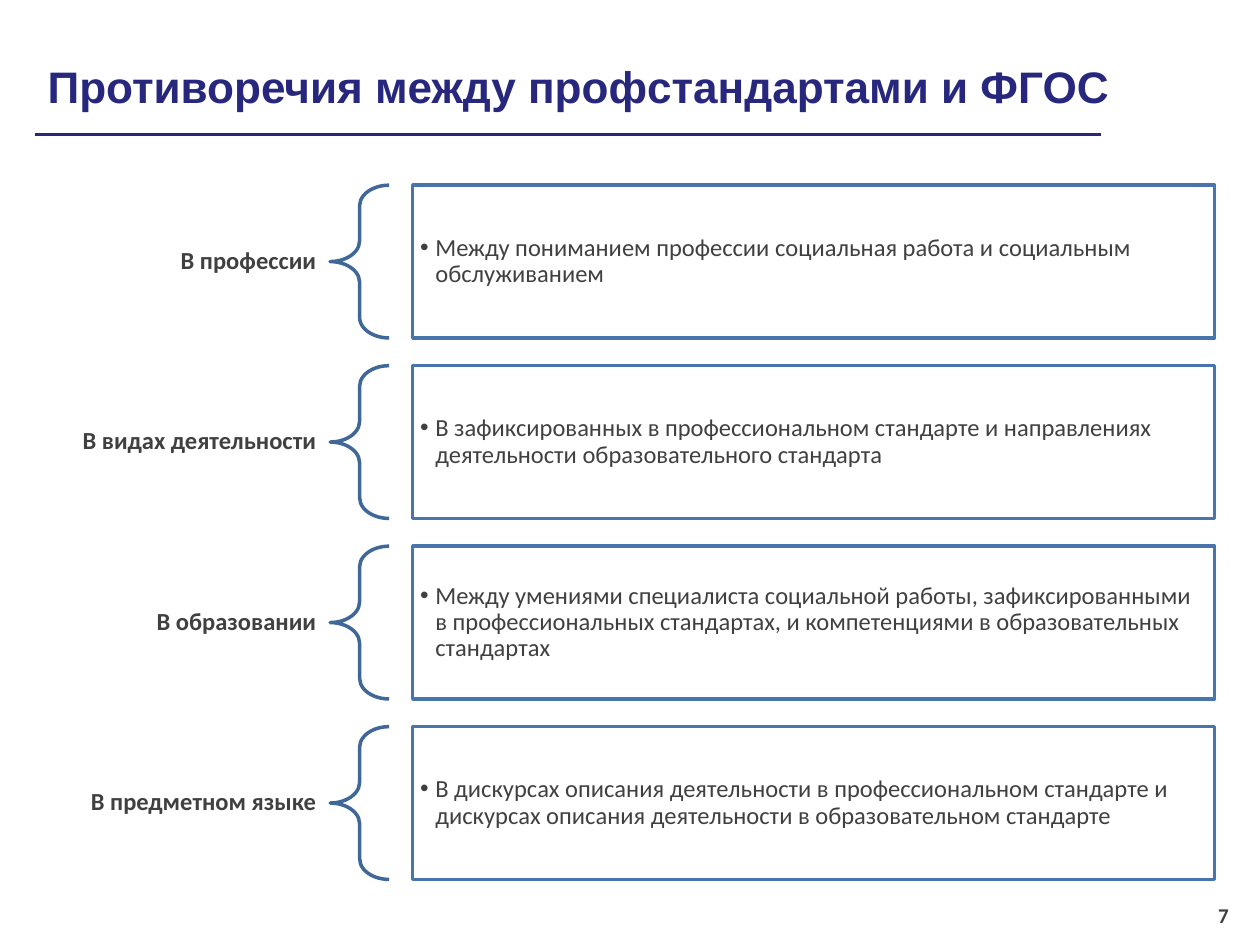
from lxml import etree
from pptx import Presentation
from pptx.dml.color import RGBColor
from pptx.enum import shapes, text
from pptx.oxml.ns import qn
from pptx.util import Inches, Pt

NAVY, GREY, WHITE = "27277E", "404040", "FFFFFF"
BRACE, FRAME = "3F6797", "4875AC"
ALIGN = text.PP_ALIGN

ROWS = [
    ("В профессии",
     "Между пониманием профессии социальная работа и социальным обслуживанием"),
    ("В видах деятельности",
     "В зафиксированных в профессиональном стандарте и направлениях "
     "деятельности образовательного стандарта"),
    ("В образовании",
     "Между умениями специалиста социальной работы, зафиксированными в "
     "профессиональных стандартах, и компетенциями в образовательных стандартах"),
    ("В предметном языке",
     "В дискурсах описания деятельности в профессиональном стандарте и "
     "дискурсах описания деятельности в образовательном стандарте"),
]


def color(code):
    return RGBColor.from_string(code)


def stroke(line, code, width):
    line.color.rgb = color(code)
    line.width = Pt(width)


def write(shape, words, size, code, bold=False, align=ALIGN.LEFT,
          font="Calibri", pad=(0.1, 0.05)):
    frame = shape.text_frame
    frame.word_wrap = True
    frame.vertical_anchor = text.MSO_ANCHOR.MIDDLE
    frame.margin_left = frame.margin_right = Inches(pad[0])
    frame.margin_top = frame.margin_bottom = Inches(pad[1])
    frame.text = words
    para = frame.paragraphs[0]
    para.alignment = align
    face = para.runs[0].font
    face.name, face.size, face.bold = font, Pt(size), bold
    face.color.rgb = color(code)
    return para


def add_box(slide, left, top, width, height):
    return slide.shapes.add_textbox(
        Inches(left), Inches(top), Inches(width), Inches(height))


def add_shape(slide, kind, left, top, width, height, code):
    shape = slide.shapes.add_shape(
        kind, Inches(left), Inches(top), Inches(width), Inches(height))
    shape.shadow.inherit = False
    stroke(shape.line, code, 2)
    return shape


def add_bullet(para, indent):
    props = para._p.get_or_add_pPr()
    props.set("marL", str(Inches(indent)))
    props.set("indent", str(-Inches(indent)))
    etree.SubElement(props, qn("a:buFont")).set("typeface", "Arial")
    etree.SubElement(props, qn("a:buChar")).set("char", "•")


def add_title(slide, left, top, width, height, words):
    """Place the heading with a rule along the bottom of its box."""
    base = Inches(top + height)
    rule = slide.shapes.add_connector(
        shapes.MSO_CONNECTOR.STRAIGHT,
        Inches(left), base, Inches(8.74), base)
    stroke(rule.line, NAVY, 1.5)
    etree.SubElement(rule._element.spPr, qn("a:effectLst"))
    box = add_box(slide, left, top, width, height)
    write(box, words, 25.2, NAVY, True, font="Arial")


def add_row(slide, left, top, width, height, label, words):
    """Place a label, a brace and a framed point side by side."""
    tag, brace, gap = width * 0.25, width * 0.05, width * 0.02
    box = add_box(slide, left, top, tag, height)
    para = write(box, label, 14, GREY, True, ALIGN.RIGHT, pad=(0.11, 0.04))
    para.line_spacing = 0.9

    curve = add_shape(slide, shapes.MSO_SHAPE.LEFT_BRACE,
                      left + tag, top, brace, height, BRACE)
    curve.adjustments[0] = 0.35
    curve.fill.background()

    start = tag + brace + gap
    frame = add_shape(slide, shapes.MSO_SHAPE.RECTANGLE,
                      left + start, top, width - start, height, FRAME)
    frame.fill.solid()
    frame.fill.fore_color.rgb = color(WHITE)
    para = write(frame, words, 14, GREY, pad=(0.06, 0.06))
    para.line_spacing = 0.9
    add_bullet(para, 0.12)


def add_rows(slide, left, top, width, height, rows, gap=0.22):
    tall = (height - gap * (len(rows) - 1)) / len(rows)
    for i, (label, words) in enumerate(rows):
        add_row(slide, left, top + i * (tall + gap), width, tall, label, words)


def main():
    deck = Presentation()
    deck.slide_width, deck.slide_height = Inches(10), Inches(7.5)
    slide = deck.slides.add_slide(deck.slide_layouts[6])
    add_title(slide, 0.28, 0.3, 8.74, 0.77,
              "Противоречия между профстандартами и ФГОС")
    add_rows(slide, 0.28, 1.47, 9.36, 5.51, ROWS)
    number = add_box(slide, 7.52, 7.06, 2.33, 0.4)
    write(number, "7", 12, GREY, True, ALIGN.RIGHT)
    deck.save("out.pptx")


if __name__ == "__main__":
    main()
